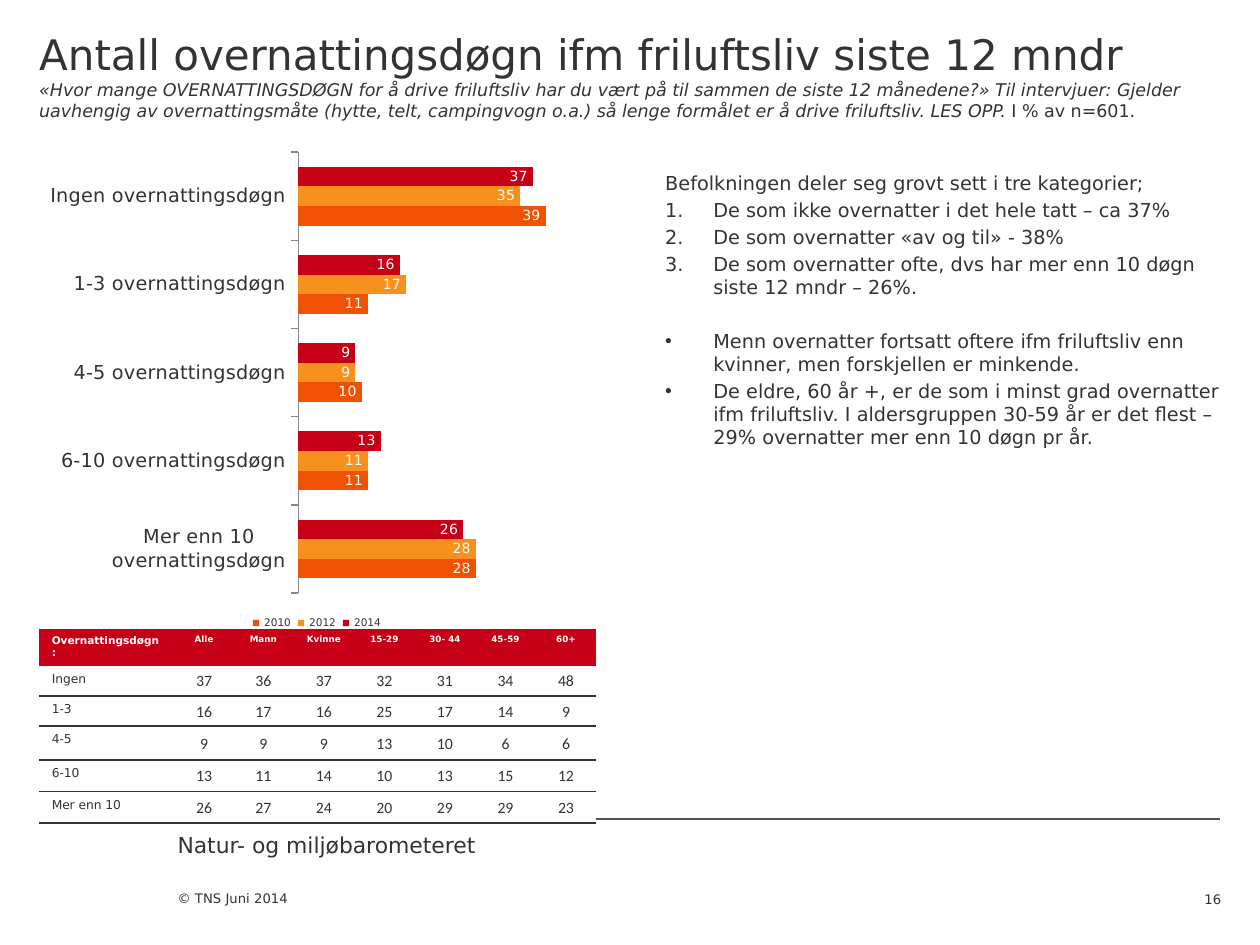
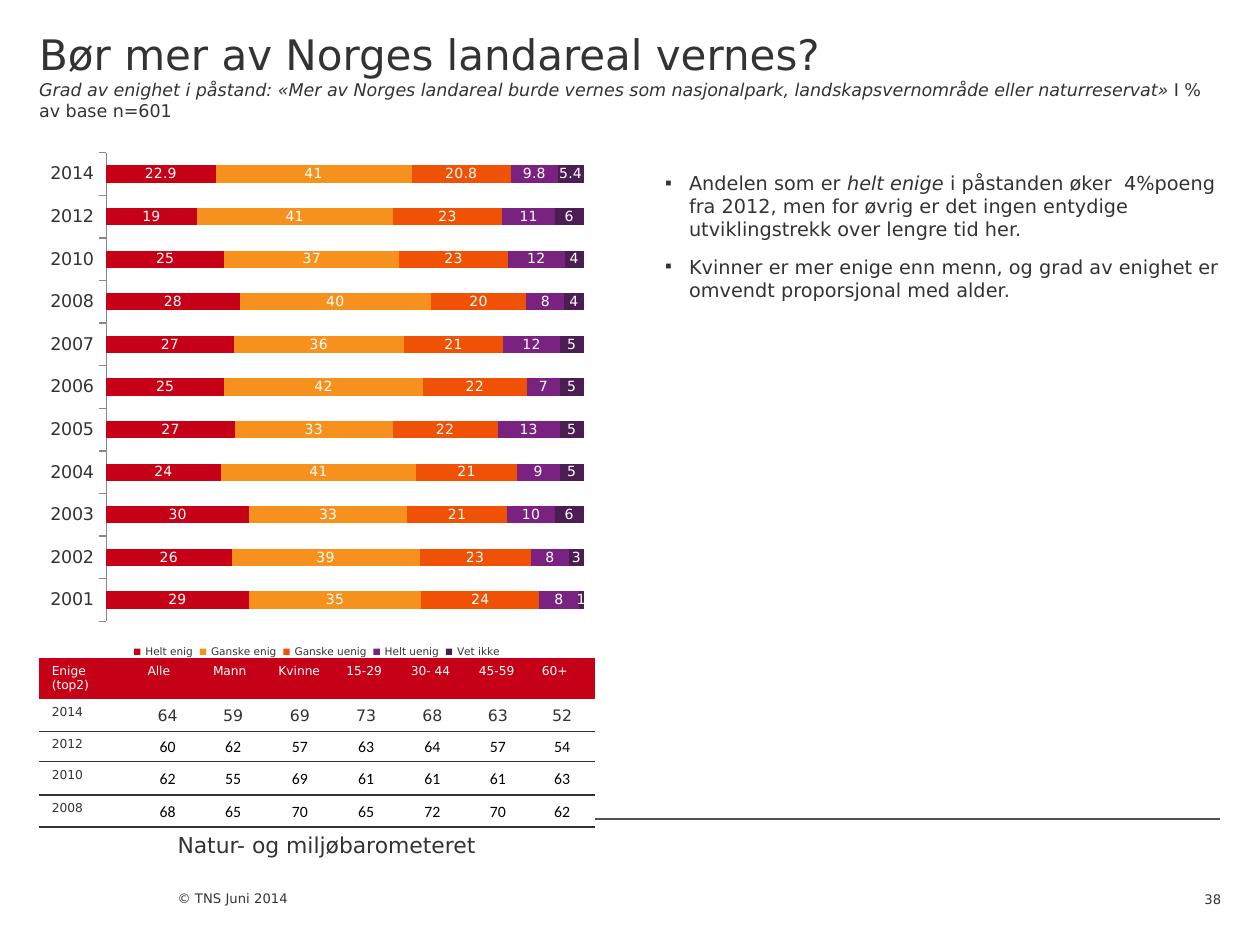
"""Builds two survey slides, each with a bar chart, a table and comments."""
from dataclasses import dataclass

from lxml import etree
from pptx import Presentation
from pptx.chart.data import CategoryChartData
from pptx.dml.color import RGBColor
from pptx.enum.chart import XL_CHART_TYPE, XL_LABEL_POSITION, XL_LEGEND_POSITION, XL_TICK_MARK
from pptx.enum.shapes import MSO_CONNECTOR
from pptx.enum.text import MSO_ANCHOR, MSO_AUTO_SIZE, PP_ALIGN
from pptx.oxml.ns import qn
from pptx.util import Cm, Pt

CLUSTERED, STACKED = XL_CHART_TYPE.BAR_CLUSTERED, XL_CHART_TYPE.BAR_STACKED_100
INSIDE_END, CENTER_LABEL = XL_LABEL_POSITION.INSIDE_END, XL_LABEL_POSITION.CENTER
LEGEND_BOTTOM = XL_LEGEND_POSITION.BOTTOM
TICK_OUTSIDE, TICK_NONE = XL_TICK_MARK.OUTSIDE, XL_TICK_MARK.NONE
STRAIGHT = MSO_CONNECTOR.STRAIGHT
TOP, MIDDLE, BOTTOM = MSO_ANCHOR.TOP, MSO_ANCHOR.MIDDLE, MSO_ANCHOR.BOTTOM
NO_FIT = MSO_AUTO_SIZE.NONE
LEFT, CENTER, RIGHT = PP_ALIGN.LEFT, PP_ALIGN.CENTER, PP_ALIGN.RIGHT
NO_GRID_STYLE = "{2D5ABB26-0587-4C30-8999-92F81FD0307C}"


@dataclass(frozen=True)
class Theme:
    """Colours, fonts, type sizes and shared positions."""

    font: str = "DejaVu Sans"
    number_font: str = "Calibri"
    ink: str = "333333"
    black: str = "000000"
    white: str = "FFFFFF"
    rule: str = "525252"
    axis: str = "878787"
    red: str = "C50017"
    amber: str = "F7911E"
    orange: str = "EF5205"
    violet: str = "7A2280"
    plum: str = "4C1D52"
    title: float = 24
    question: float = 10
    body: float = 11
    footer: float = 12.5
    small: float = 7.5
    label: float = 8
    legend: float = 6
    cell: float = 7
    number: float = 9
    left: float = 0.79
    top: float = 2.87
    column: float = 11.2
    right_column: float = 13.41
    full_width: float = 23.8
    inset_top: float = 0.58


THEME = Theme()
GROUPS = ["Alle", "Mann", "Kvinne", "15-29", "30- 44", "45-59", "60+"]


def rgb(code):
    """Return the colour for a hex code."""
    return RGBColor.from_string(code)


def style_font(font, size, color=THEME.ink, name=THEME.font, bold=False, italic=False):
    """Set size, colour, typeface and emphasis of a font."""
    font.size, font.name, font.bold, font.italic = Pt(size), name, bold, italic
    font.color.rgb = rgb(color)


def add_text(para, text, size=THEME.body, **style):
    """Add a formatted span to a paragraph."""
    span = para.add_run()
    span.text = text
    style_font(span.font, size, **style)


def set_frame(frame, anchor=TOP, top=0, bottom=0, sides=0):
    """Set wrapping, anchor and insets of a text frame."""
    frame.word_wrap, frame.auto_size, frame.vertical_anchor = True, NO_FIT, anchor
    frame.margin_left = frame.margin_right = Cm(sides)
    frame.margin_top, frame.margin_bottom = Cm(top), Cm(bottom)


def place(box, left, top, width, height):
    """Move and size a shape, in centimetres."""
    box.left, box.top, box.width, box.height = Cm(left), Cm(top), Cm(width), Cm(height)


def add_label(page, text, left, top, width, height, size, anchor=TOP, align=LEFT, bottom=0):
    """Add a text box with one line."""
    box = page.shapes.add_textbox(Cm(left), Cm(top), Cm(width), Cm(height))
    set_frame(box.text_frame, anchor, bottom=bottom)
    para = box.text_frame.paragraphs[0]
    para.alignment = align
    add_text(para, text, size)


def add_footer(page, number):
    """Add the rule, survey name, copyright line and page number."""
    rule = page.shapes.add_connector(
        STRAIGHT, Cm(THEME.left), Cm(16.51), Cm(THEME.left + THEME.full_width), Cm(16.51))
    rule.line.color.rgb, rule.line.width = rgb(THEME.rule), Pt(0.75)
    etree.SubElement(rule.element.spPr, qn("a:effectLst"))
    add_label(page, "Natur- og miljøbarometeret", 3.58, 16.76, 8.41, 1.07, THEME.footer)
    add_label(page, "© TNS Juni 2014", 3.58, 17.58, 7.06, 1.47, THEME.small, BOTTOM, bottom=0.79)
    add_label(page, number, 23.22, 17.58, 1.4, 0.71, THEME.small, BOTTOM, RIGHT)


def fill_title(page, heading, question, base):
    """Write the heading, the question in italics and the base."""
    title = page.shapes.title
    place(title, THEME.left, 0, THEME.full_width, THEME.top)
    set_frame(title.text_frame, top=THEME.inset_top)
    para = title.text_frame.paragraphs[0]
    para.alignment = LEFT
    add_text(para, heading, THEME.title)
    para.add_line_break()
    add_text(para, question, THEME.question, italic=True)
    add_text(para, base, THEME.question)


def set_bullet(para, bullet, indent):
    """Give a paragraph a number, a bullet sign or neither."""
    props = para._p.get_or_add_pPr()
    props.set("marL", str(Cm(indent)))
    props.set("indent", str(-Cm(indent)))
    if bullet == "1.":
        etree.SubElement(props, qn("a:buAutoNum"), type="arabicPeriod")
    elif bullet:
        etree.SubElement(props, qn("a:buChar"), char=bullet)
    else:
        etree.SubElement(props, qn("a:buNone"))


def fill_comments(page, comments, indent):
    """Write the comments from tuples of bullet, space before and spans."""
    body = page.placeholders[1]
    place(body, THEME.right_column, THEME.top, THEME.column, 13.34)
    frame = body.text_frame
    set_frame(frame, top=THEME.inset_top)
    for index, (bullet, space, spans) in enumerate(comments):
        para = frame.add_paragraph() if index else frame.paragraphs[0]
        set_bullet(para, bullet, indent if bullet else 0)
        para.space_before = Pt(space)
        for text, italic in spans:
            add_text(para, text, italic=italic)


def add_bars(page, kind, height, categories, series, axis_size):
    """Add a horizontal bar chart from tuples of name, colour and values."""
    data = CategoryChartData()
    data.categories = categories
    for name, _, values in series:
        data.add_series(name, values)
    chart = page.shapes.add_chart(
        kind, Cm(THEME.left), Cm(THEME.top), Cm(THEME.column), Cm(height), data).chart
    style_font(chart.font, 18)
    chart.has_title = False
    chart.has_legend = True
    chart.legend.position, chart.legend.include_in_layout = LEGEND_BOTTOM, False
    style_font(chart.legend.font, THEME.legend)

    rows, scale = chart.category_axis, chart.value_axis
    rows.reverse_order = True
    rows.major_tick_mark, rows.minor_tick_mark = TICK_OUTSIDE, TICK_NONE
    rows.format.line.color.rgb = rgb(THEME.axis)
    style_font(rows.tick_labels.font, axis_size)
    scale.visible = scale.has_major_gridlines = False
    scale.minimum_scale = 0

    plot = chart.plots[0]
    plot.gap_width, plot.vary_by_categories = 150, False
    if kind == STACKED:
        plot.overlap, scale.maximum_scale = 100, 1
    for bars, (_, color, _) in zip(plot.series, series):
        bars.format.fill.solid()
        bars.format.fill.fore_color.rgb = rgb(color)
        labels = bars.data_labels
        labels.show_value = True
        labels.position = CENTER_LABEL if kind == STACKED else INSIDE_END
        style_font(labels.font, THEME.label, THEME.white)


def fill_cell(cell, text, fill, align=LEFT, compact=False, **style):
    """Write one table cell; a compact cell is centred with thin insets."""
    cell.fill.solid()
    cell.fill.fore_color.rgb = rgb(fill)
    if compact:
        cell.vertical_anchor = MIDDLE
        cell.margin_left = cell.margin_right = cell.margin_top = Cm(0.03)
        cell.margin_bottom = 0
    para = cell.text_frame.paragraphs[0]
    para.alignment = align
    add_text(para, text, **style)


def underline_cell(cell):
    """Draw the line below a cell."""
    line = etree.Element(qn("a:lnB"), w=str(Pt(1)))
    fill = etree.SubElement(line, qn("a:solidFill"))
    etree.SubElement(fill, qn("a:srgbClr"), val=THEME.ink)
    cell._tc.get_or_add_tcPr().insert(0, line)


def add_group_table(page, top, widths, heights, corner, rows, header, number_style, first_style):
    """Add the table of percentages by sex and age group."""
    holder = page.shapes.add_table(
        len(heights), len(widths), Cm(THEME.left), Cm(top), Cm(sum(widths)), Cm(sum(heights)))
    table = holder.table
    next(holder.element.iter(qn("a:tableStyleId"))).text = NO_GRID_STYLE
    table.first_row = table.horz_banding = False
    for column, width in zip(table.columns, widths):
        column.width = Cm(width)
    for row, height in zip(table.rows, heights):
        row.height = Cm(height)

    fill_cell(table.cell(0, 0), corner[0], THEME.red, color=THEME.white, **corner[1])
    for column, group in enumerate(GROUPS, 1):
        fill_cell(table.cell(0, column), group, THEME.red, color=THEME.white, **header)
    for index, (label, *values) in enumerate(rows, 1):
        fill_cell(table.cell(index, 0), label, THEME.white, size=THEME.cell)
        style = first_style if index == 1 else number_style
        for column, value in enumerate(values, 1):
            fill_cell(table.cell(index, column), str(value), THEME.white, CENTER, True,
                      size=THEME.number, **style)
        for column in range(len(widths)):
            underline_cell(table.cell(index, column))


def add_page(deck, number):
    """Add a slide with the shared footer."""
    page = deck.slides.add_slide(deck.slide_layouts[1])
    add_footer(page, number)
    return page


def build_nights(deck):
    """Build the slide about overnight stays."""
    page = add_page(deck, "16")
    fill_title(
        page, "Antall overnattingsdøgn ifm friluftsliv siste 12 mndr",
        "«Hvor mange OVERNATTINGSDØGN for å drive friluftsliv har du vært på til sammen de siste "
        "12 månedene?» Til intervjuer: Gjelder uavhengig av overnattingsmåte (hytte, telt, "
        "campingvogn o.a.) så lenge formålet er å drive friluftsliv. LES OPP. ", "I % av n=601.")
    spans = ["Ingen", "1-3", "4-5", "6-10", "Mer enn 10"]
    add_bars(page, CLUSTERED, 9.91, [f"{span} overnattingsdøgn" for span in spans], [
        ("2014", THEME.red, (37, 16, 9, 13, 26)),
        ("2012", THEME.amber, (35, 17, 9, 11, 28)),
        ("2010", THEME.orange, (39, 11, 10, 11, 28))], 11)
    shares = [(37, 36, 37, 32, 31, 34, 48), (16, 17, 16, 25, 17, 14, 9), (9, 9, 9, 13, 10, 6, 6),
              (13, 11, 14, 10, 13, 15, 12), (26, 27, 24, 20, 29, 29, 23)]
    numbers = dict(name=THEME.number_font)
    add_group_table(
        page, 12.67, [2.74, 1.17] + [1.22] * 6, [0.75, 0.61, 0.61, 0.68, 0.64, 0.63],
        ("Overnattingsdøgn:", dict(size=6, bold=True)),
        [(span, *row) for span, row in zip(spans, shares)],
        dict(size=5, bold=True, align=CENTER), numbers, numbers)
    comments = [
        (None, 0, "Befolkningen deler seg grovt sett i tre kategorier;"),
        ("1.", 2.2, "De som ikke overnatter i det hele tatt – ca 37%"),
        ("1.", 2.2, "De som overnatter «av og til» - 38%"),
        ("1.", 2.2, "De som overnatter ofte, dvs har mer enn 10 døgn siste 12 mndr – 26%."),
        ("•", 17.6, "Menn overnatter fortsatt oftere ifm friluftsliv enn kvinner, men forskjellen "
                    "er minkende."),
        ("•", 2.2, "De eldre, 60 år +, er de som i minst grad overnatter ifm friluftsliv. I "
                   "aldersgruppen 30-59 år er det flest – 29% overnatter mer enn 10 døgn pr år.")]
    fill_comments(page, [(sign, gap, [(text, False)]) for sign, gap, text in comments], 0.97)


def build_protection(deck):
    """Build the slide about protecting more land."""
    page = add_page(deck, "38")
    fill_title(
        page, "Bør mer av Norges landareal vernes?",
        "Grad av enighet i påstand: «Mer av Norges landareal burde vernes som nasjonalpark, "
        "landskapsvernområde eller naturreservat» ", "I % av base n=601")
    years = ["2014", "2012", "2010"] + [str(year) for year in range(2008, 2000, -1)]
    add_bars(page, STACKED, 10.49, years, [
        ("Helt enig", THEME.red, (22.9, 19, 25, 28, 27, 25, 27, 24, 30, 26, 29)),
        ("Ganske enig", THEME.amber, (41, 41, 37, 40, 36, 42, 33, 41, 33, 39, 35)),
        ("Ganske uenig", THEME.orange, (20.8, 23, 23, 20, 21, 22, 22, 21, 21, 23, 24)),
        ("Helt uenig", THEME.violet, (9.8, 11, 12, 8, 12, 7, 13, 9, 10, 8, 8)),
        ("Vet ikke", THEME.plum, (5.4, 6, 4, 4, 5, 5, 5, 5, 6, 3, 1))], 10)
    add_group_table(
        page, 13.26, [1.93, 1.32, 1.32, 1.37, 1.3, 1.37, 1.27, 1.32],
        [0.83, 0.65, 0.61, 0.68, 0.64], ("Enige (top2)", dict(size=THEME.cell)),
        [("2014", 64, 59, 69, 73, 68, 63, 52), ("2012", 60, 62, 57, 63, 64, 57, 54),
         ("2010", 62, 55, 69, 61, 61, 61, 63), ("2008", 68, 65, 70, 65, 72, 70, 62)],
        dict(size=THEME.cell), dict(name=THEME.number_font, color=THEME.black), {})
    fill_comments(page, [
        ("▪", 0, [("Andelen som er ", False), ("helt enige ", True),
                  ("i påstanden øker  4%poeng fra 2012, men for øvrig er det ingen entydige "
                   "utviklingstrekk over lengre tid her.", False)]),
        ("▪", 8.2, [("Kvinner er mer enige enn menn, og grad av enighet er omvendt proporsjonal "
                     "med alder.", False)])], 0.48)


def main():
    """Build and save the deck."""
    deck = Presentation()
    deck.slide_width, deck.slide_height = Cm(25.4), Cm(19.05)
    build_nights(deck)
    build_protection(deck)
    deck.save("out.pptx")


if __name__ == "__main__":
    main()
